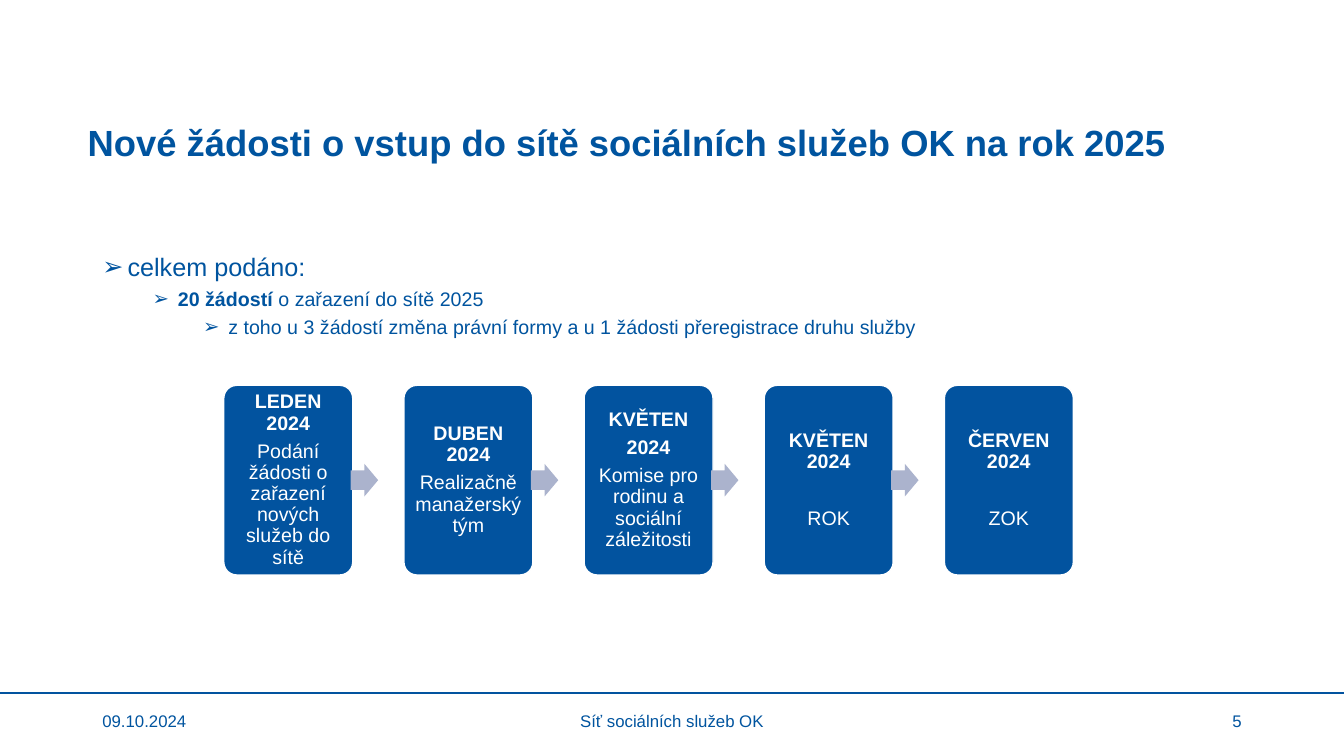
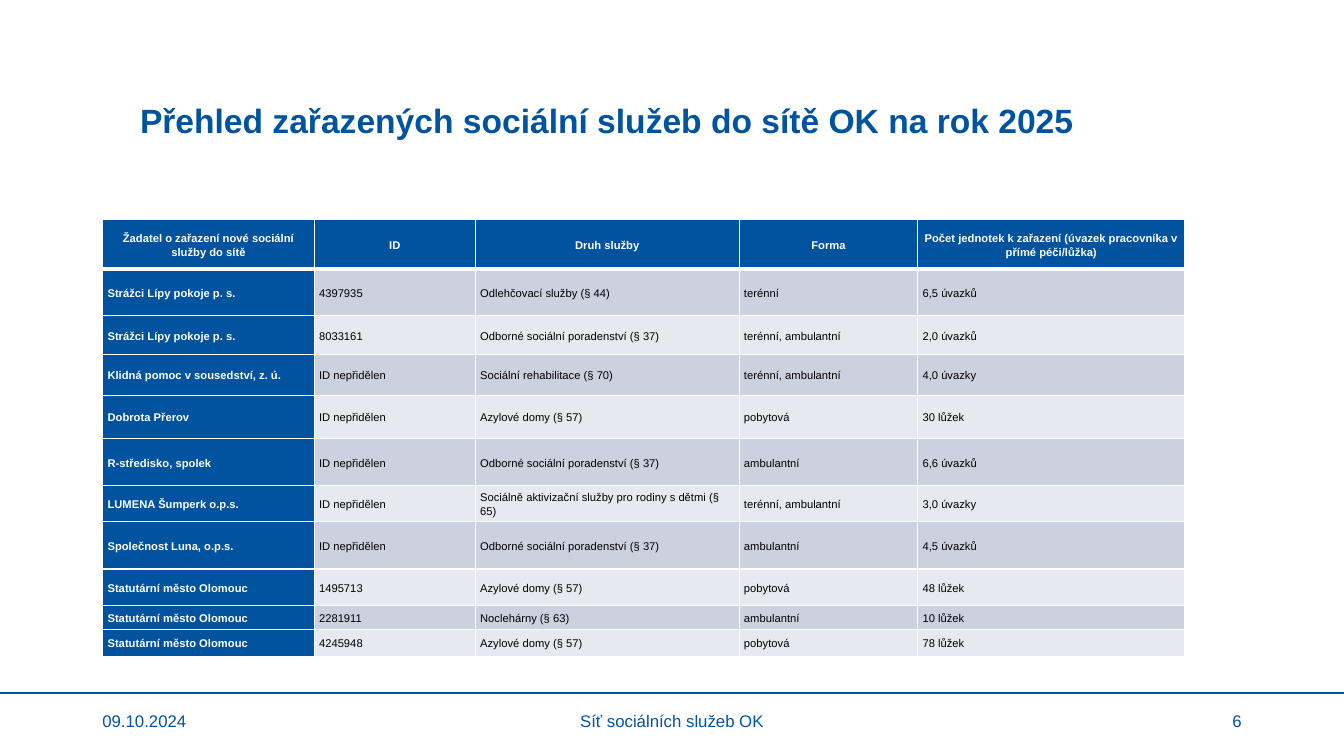
import pptx
import pptx.dml.color
import pptx.enum.shapes
import pptx.enum.text
import pptx.oxml
import pptx.oxml.ns
import pptx.util
from lxml import etree

Cm = pptx.util.Cm
Pt = pptx.util.Pt
RGBColor = pptx.dml.color.RGBColor
SHAPE = pptx.enum.shapes.MSO_SHAPE
ALIGN = pptx.enum.text.PP_ALIGN
MIDDLE = pptx.enum.text.MSO_ANCHOR.MIDDLE
qn = pptx.oxml.ns.qn

FONT = "Arial"
TEXT_BLUE = RGBColor(0x00, 0x54, 0x9F)
BLUE = RGBColor(0x02, 0x53, 0x9F)
ARROW = RGBColor(0xAB, 0xB3, 0xCD)
WHITE = RGBColor(0xFF, 0xFF, 0xFF)
BLACK = RGBColor(0x00, 0x00, 0x00)
BANDS = [RGBColor(0xCC, 0xD1, 0xDF), RGBColor(0xE7, 0xE9, 0xF0)]

SLIDE_W, SLIDE_H = 33.87, 19.05
DATE = "09.10.2024"
FOOTER = "Síť sociálních služeb OK"

BULLETS = [
    [("celkem podáno:", 18, False)],
    [("20 žádostí", 14, True), (" o zařazení do sítě 2025", 14, False)],
    [("z toho u 3 žádostí změna právní formy a u 1 žádosti "
      "přeregistrace druhu služby", 14, False)],
]

# Heading paragraphs, body text, space between heading and body in points
STEPS = [
    (["LEDEN 2024"], "Podání žádosti o zařazení nových služeb do sítě", 4.9),
    (["DUBEN 2024"], "Realizačně manažerský tým", 4.9),
    (["KVĚTEN", "2024"], "Komise pro rodinu a sociální záležitosti", 4.9),
    (["KVĚTEN 2024"], "ROK", 25),
    (["ČERVEN 2024"], "ZOK", 25),
]

COL_WIDTHS = [5.33, 4.06, 6.65, 4.5, 6.73]
ROW_HEIGHTS = [1.24, 1.17, 0.99, 1.02, 1.09, 1.19, 0.91, 1.19, 0.91, 0.61, 0.69]
ROWS = [
    ("Žadatel o zařazení nové sociální služby do sítě", "ID", "Druh služby", "Forma",
     "Počet jednotek k zařazení (úvazek pracovníka v přímé péči/lůžka)"),
    ("Strážci Lípy pokoje p. s.", "4397935", "Odlehčovací služby (§ 44)",
     "terénní", "6,5 úvazků"),
    ("Strážci Lípy pokoje p. s.", "8033161", "Odborné sociální poradenství (§ 37)",
     "terénní, ambulantní", "2,0 úvazků"),
    ("Klidná pomoc v sousedství, z. ú.", "ID nepřidělen", "Sociální rehabilitace (§ 70)",
     "terénní, ambulantní", "4,0 úvazky"),
    ("Dobrota Přerov", "ID nepřidělen", "Azylové domy (§ 57)", "pobytová", "30 lůžek"),
    ("R-středisko, spolek", "ID nepřidělen", "Odborné sociální poradenství (§ 37)",
     "ambulantní", "6,6 úvazků"),
    ("LUMENA Šumperk o.p.s.", "ID nepřidělen",
     "Sociálně aktivizační služby pro rodiny s dětmi (§ 65)",
     "terénní, ambulantní", "3,0 úvazky"),
    ("Společnost Luna, o.p.s.", "ID nepřidělen", "Odborné sociální poradenství (§ 37)",
     "ambulantní", "4,5 úvazků"),
    ("Statutární město Olomouc", "1495713", "Azylové domy (§ 57)", "pobytová", "48 lůžek"),
    ("Statutární město Olomouc", "2281911", "Noclehárny (§ 63)", "ambulantní", "10 lůžek"),
    ("Statutární město Olomouc", "4245948", "Azylové domy (§ 57)", "pobytová", "78 lůžek"),
]


def add_run(p, text, size=12, color=TEXT_BLUE, bold=False):
    r = p.add_run()
    r.text = text
    r.font.name = FONT
    r.font.size = Pt(size)
    r.font.bold = bold
    r.font.color.rgb = color


def next_paragraph(tf):
    """Return the first paragraph while it is empty, else a new one."""
    return tf.add_paragraph() if tf.paragraphs[0].runs else tf.paragraphs[0]


def write(tf, text, align=ALIGN.LEFT, spacing=None, after=None, **font):
    p = next_paragraph(tf)
    p.alignment = align
    p.line_spacing = spacing
    if after is not None:
        p.space_after = Pt(after)
    add_run(p, text, **font)


def add_text_frame(slide, left, top, width, height):
    box = slide.shapes.add_textbox(Cm(left), Cm(top), Cm(width), Cm(height))
    box.text_frame.word_wrap = True
    return box.text_frame


def add_label(slide, text, left, top, width, height, **kwargs):
    tf = add_text_frame(slide, left, top, width, height)
    tf.vertical_anchor = MIDDLE
    write(tf, text, **kwargs)


def add_footer(slide, number):
    y = 17.47
    line = slide.shapes.add_connector(
        pptx.enum.shapes.MSO_CONNECTOR.STRAIGHT, 0, Cm(y), Cm(SLIDE_W), Cm(y))
    line.line.color.rgb = BLUE
    line.line.width = Pt(1.5)
    etree.SubElement(line._element.spPr, qn("a:effectLst"))
    add_label(slide, DATE, 2.33, 17.65, 7.62, 1.01)
    add_label(slide, FOOTER, 11.22, 17.65, 11.43, 1.01, align=ALIGN.CENTER)
    add_label(slide, str(number), 23.92, 17.65, 7.62, 1.01, align=ALIGN.RIGHT)


def add_slide(prs, number, title, left, top, size):
    slide = prs.slides.add_slide(prs.slide_layouts[6])
    add_label(slide, title, left, top, 29.21, 1.9, size=size, bold=True, spacing=0.9)
    add_footer(slide, number)
    return slide


def add_bullets(slide, items):
    """Write each item one level deeper than the item before."""
    tf = add_text_frame(slide, 2.33, 6.3, 29.21, 3)
    for level, runs in enumerate(items):
        p = next_paragraph(tf)
        p.level = level
        p.line_spacing = 0.9
        if level:
            p.space_before = Pt(5)
        pPr = p._p.get_or_add_pPr()
        pPr.set("marL", str(Cm(0.635 + 1.27 * level)))
        pPr.set("indent", str(-Cm(0.635)))
        etree.SubElement(pPr, qn("a:buFont")).set("typeface", FONT)
        etree.SubElement(pPr, qn("a:buChar")).set("char", "➢")
        for text, size, bold in runs:
            add_run(p, text, size=size, bold=bold)


def add_filled_shape(slide, kind, left, top, width, height, fill, adjustments):
    sp = slide.shapes.add_shape(kind, Cm(left), Cm(top), Cm(width), Cm(height))
    sp.shadow.inherit = False
    sp.fill.solid()
    sp.fill.fore_color.rgb = fill
    sp.line.fill.background()
    for i, value in enumerate(adjustments):
        sp.adjustments[i] = value
    return sp


def add_process(slide, steps):
    left, top, width, height, pitch = 5.64, 9.71, 3.25, 4.78, 4.54
    arrow_w, arrow_h = 0.69, 0.82
    for i, (headings, body, gap) in enumerate(steps):
        x = left + i * pitch
        card = add_filled_shape(slide, SHAPE.ROUNDED_RECTANGLE, x, top, width, height,
                                BLUE, [0.1])
        card.line.color.rgb = WHITE
        card.line.width = Pt(1)
        tf = card.text_frame
        tf.word_wrap = True
        tf.vertical_anchor = MIDDLE
        tf.margin_left = tf.margin_right = tf.margin_top = tf.margin_bottom = Cm(0.15)
        style = dict(align=ALIGN.CENTER, spacing=0.9, size=14, color=WHITE)
        for heading in headings:
            write(tf, heading, bold=True, after=gap, **style)
        write(tf, body, after=4.9, **style)
        if i < len(steps) - 1:
            arrow_x = x + (width + pitch - arrow_w) / 2 - 0.35
            add_filled_shape(slide, SHAPE.RIGHT_ARROW, arrow_x,
                             top + (height - arrow_h) / 2, arrow_w, arrow_h,
                             ARROW, [0.6, 0.5])


def set_borders(cell, bottom=1, top=1):
    tcPr = cell._tc.get_or_add_tcPr()
    for side, width in (("L", 1), ("R", 1), ("T", top), ("B", bottom)):
        ln = etree.SubElement(tcPr, qn("a:ln" + side))
        ln.set("w", str(Pt(width)))
        fill = etree.SubElement(ln, qn("a:solidFill"))
        etree.SubElement(fill, qn("a:srgbClr")).set("val", str(WHITE))


def add_services_table(slide):
    table = slide.shapes.add_table(
        len(ROWS), len(COL_WIDTHS), Cm(2.59), Cm(5.54),
        Cm(sum(COL_WIDTHS)), Cm(sum(ROW_HEIGHTS))).table
    for column, width in zip(table.columns, COL_WIDTHS):
        column.width = Cm(width)
    for row, height in zip(table.rows, ROW_HEIGHTS):
        row.height = Cm(height)
    for i, texts in enumerate(ROWS):
        for j, text in enumerate(texts):
            cell = table.cell(i, j)
            strong = i == 0 or j == 0
            set_borders(cell, bottom=3 if i == 0 else 1, top=3 if i == 1 else 1)
            cell.fill.solid()
            cell.fill.fore_color.rgb = BLUE if strong else BANDS[(i - 1) % 2]
            cell.vertical_anchor = MIDDLE
            cell.margin_left = cell.margin_right = Cm(0.12)
            cell.margin_top = cell.margin_bottom = 0
            write(cell.text_frame, text, size=8, bold=strong, spacing=1.15,
                  color=WHITE if strong else BLACK,
                  align=ALIGN.CENTER if i == 0 else ALIGN.LEFT)


def main():
    prs = pptx.Presentation()
    prs.slide_width, prs.slide_height = Cm(SLIDE_W), Cm(SLIDE_H)

    slide = add_slide(prs, 5, "Nové žádosti o vstup do sítě sociálních služeb OK na rok 2025",
                      1.96, 2.69, 26)
    add_bullets(slide, BULLETS)
    add_process(slide, STEPS)

    slide = add_slide(prs, 6, "Přehled zařazených sociální služeb do sítě OK na rok 2025",
                      3.28, 2.13, 24)
    add_services_table(slide)

    prs.save("out.pptx")


if __name__ == "__main__":
    main()
